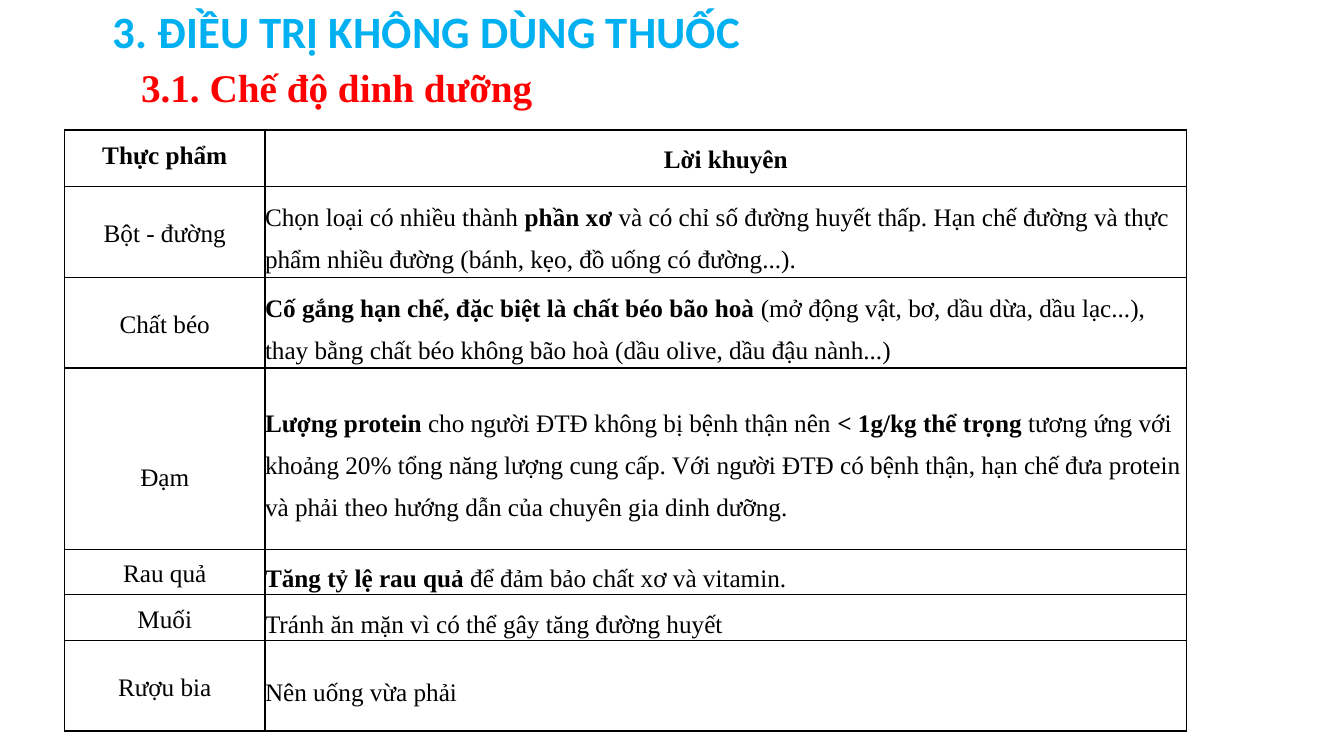
import pptx
import pptx.util
import pptx.dml.color
import pptx.enum.text
from lxml import etree

NS = "http://schemas.openxmlformats.org/drawingml/2006/main"
ALIGN = pptx.enum.text.PP_ALIGN
MIDDLE = pptx.enum.text.MSO_ANCHOR.MIDDLE
SERIF = "Times New Roman"
BLACK = "000000"


def color(code):
    return pptx.dml.color.RGBColor.from_string(code)


class Deck:
    """Holds the style and the slide; lengths are percent of the slide's size."""

    def __init__(self):
        self.prs = pptx.Presentation()
        self.prs.slide_width = pptx.util.Inches(13.33)
        self.prs.slide_height = pptx.util.Inches(7.5)
        self.slide = self.prs.slides.add_slide(self.prs.slide_layouts[6])

    def wide(self, share):
        return round(self.prs.slide_width * share / 100)

    def high(self, share):
        return round(self.prs.slide_height * share / 100)

    def runs(self, para, text, size, font, code, bold=False):
        """Add runs; each asterisk switches bold on or off."""
        for part in text.split("*"):
            if part:
                run = para.add_run()
                run.text = part
                run.font.size = pptx.util.Pt(size)
                run.font.name = font
                run.font.bold = bold
                run.font.color.rgb = color(code)
            bold = not bold

    def head(self, text, left, top, width, height, size, font, code, inset=0.75, wrap=True):
        box = self.slide.shapes.add_textbox(
            self.wide(left), self.high(top), self.wide(width), self.high(height))
        frame = box.text_frame
        frame.word_wrap = wrap
        frame.vertical_anchor = MIDDLE
        frame.margin_left = self.wide(inset)
        para = frame.paragraphs[0]
        para.line_spacing = 0.9 if wrap else 1.0
        self.runs(para, text, size, font, code, True)

    def border(self, cell):
        props = cell._tc.get_or_add_tcPr()
        for side in ("lnL", "lnR", "lnT", "lnB"):
            line = etree.SubElement(props, f"{{{NS}}}{side}", w="12700")
            fill = etree.SubElement(line, f"{{{NS}}}solidFill")
            etree.SubElement(fill, f"{{{NS}}}srgbClr", val=BLACK)

    def cell(self, cell, text, align, space, top=0):
        cell.margin_left = cell.margin_right = cell.margin_bottom = 0
        cell.margin_top = self.high(top)
        cell.vertical_anchor = MIDDLE
        self.border(cell)
        cell.fill.background()
        para = cell.text_frame.paragraphs[0]
        para.alignment = align
        para.line_spacing = space
        self.runs(para, text, 18, SERIF, BLACK)

    def table(self, left, top, cols, rows):
        grid = self.slide.shapes.add_table(
            len(rows), len(cols), self.wide(left), self.high(top),
            self.wide(sum(cols)), self.high(sum(row[0] for row in rows))).table
        grid.first_row = grid.horz_banding = False
        for col, width in zip(grid.columns, cols):
            col.width = self.wide(width)
        for i, (height, food, tip) in enumerate(rows):
            grid.rows[i].height = self.high(height)
            first = i == 0
            # The tall row sets its label one line lower
            drop = 4.4 if height == 24 else 0
            self.cell(grid.cell(i, 0), food, ALIGN.CENTER,
                      pptx.util.Pt(16.1) if first else 1.15, drop)
            self.cell(grid.cell(i, 1), tip, ALIGN.CENTER if first else ALIGN.LEFT,
                      1.15 if first else 1.5)


# Row height, food, advice
ROWS = [
    (7.47, "*Thực phẩm*", "*Lời khuyên*"),
    (12, "Bột - đường",
     "Chọn loại có nhiều thành *phần xơ *và có chỉ số đường huyết thấp. "
     "Hạn chế đường và thực phẩm nhiều đường (bánh, kẹo, đồ uống có đường...)."),
    (12, "Chất béo",
     "*Cố gắng hạn chế, đặc biệt là chất béo bão hoà *(mở động vật, bơ, dầu dừa, "
     "dầu lạc...), thay bằng chất béo không bão hoà (dầu olive, dầu đậu nành...)"),
    (24, "Đạm",
     "*Lượng protein *cho người ĐTĐ không bị bệnh thận nên *< 1g/kg thể trọng *"
     "tương ứng với khoảng 20% tổng năng lượng cung cấp. Với người ĐTĐ có bệnh thận, "
     "hạn chế đưa protein và phải theo hướng dẫn của chuyên gia dinh dưỡng."),
    (6, "Rau quả", "*Tăng tỷ lệ rau quả *để đảm bảo chất xơ và vitamin."),
    (6, "Muối", "Tránh ăn mặn vì có thể gây tăng đường huyết"),
    (12, "Rượu bia", "Nên uống vừa phải"),
]


def main():
    deck = Deck()
    # Headings
    deck.head("3. ĐIỀU TRỊ KHÔNG DÙNG THUỐC", 6.9, 0, 86.25, 8.93,
              32, "Calibri", "00B0F0", inset=1.5)
    deck.head("3.1. Chế độ dinh dưỡng", 9.75, 7.73, 31, 7.6,
              28, SERIF, "FF0000", wrap=False)
    # Diet table
    deck.table(4.8, 17.2, (14.92, 68.57), ROWS)
    deck.prs.save("out.pptx")


if __name__ == "__main__":
    main()
